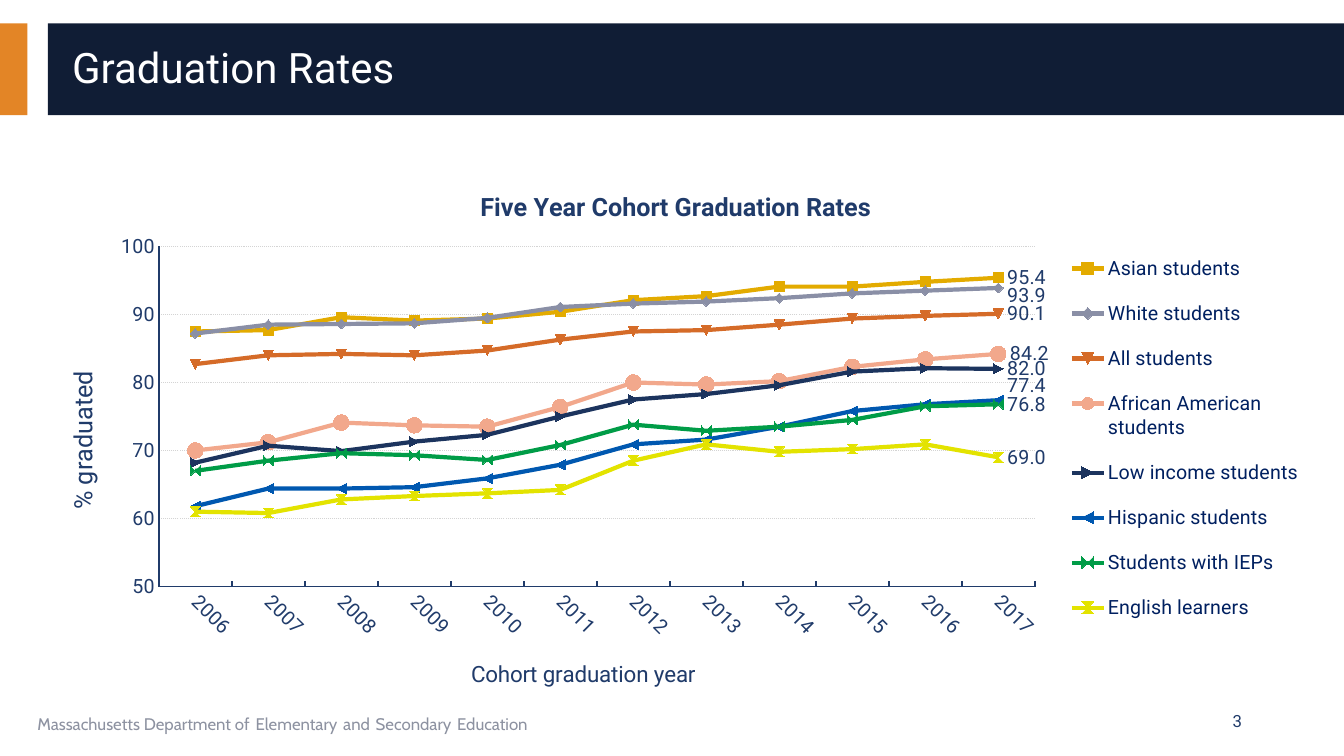
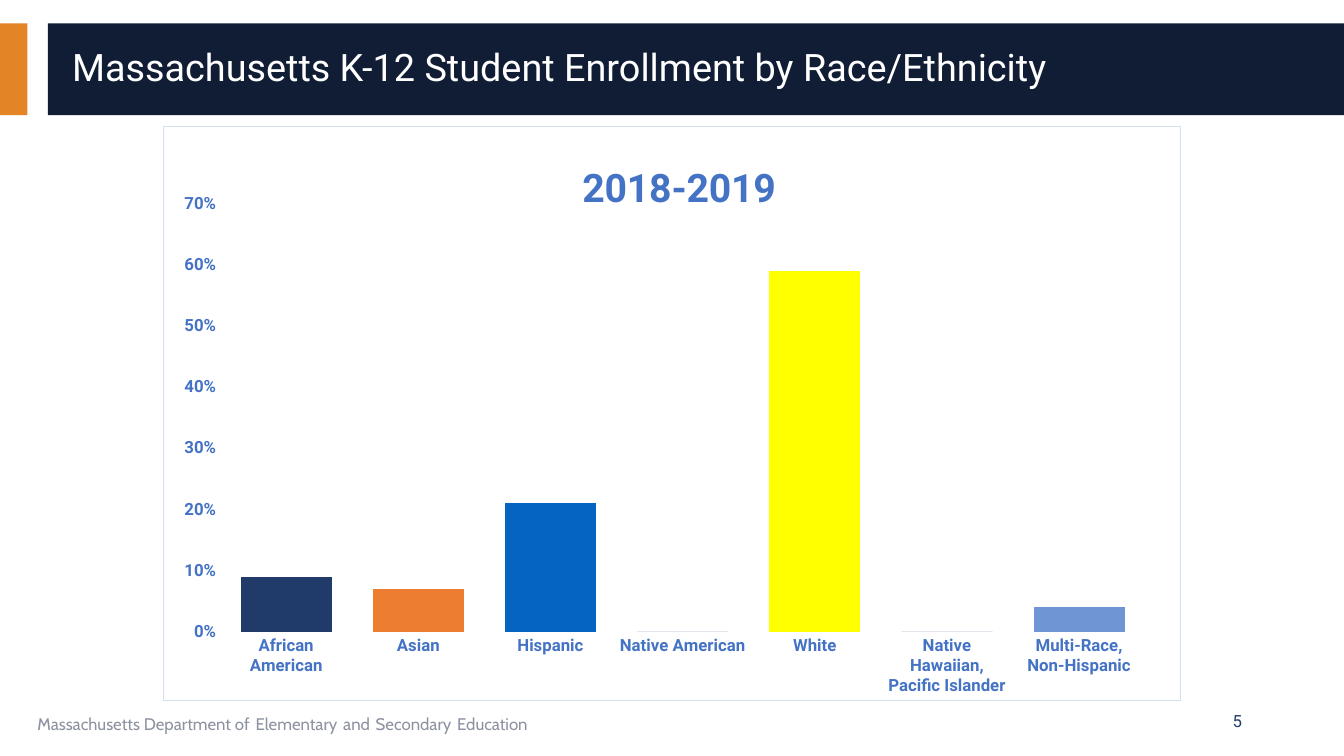
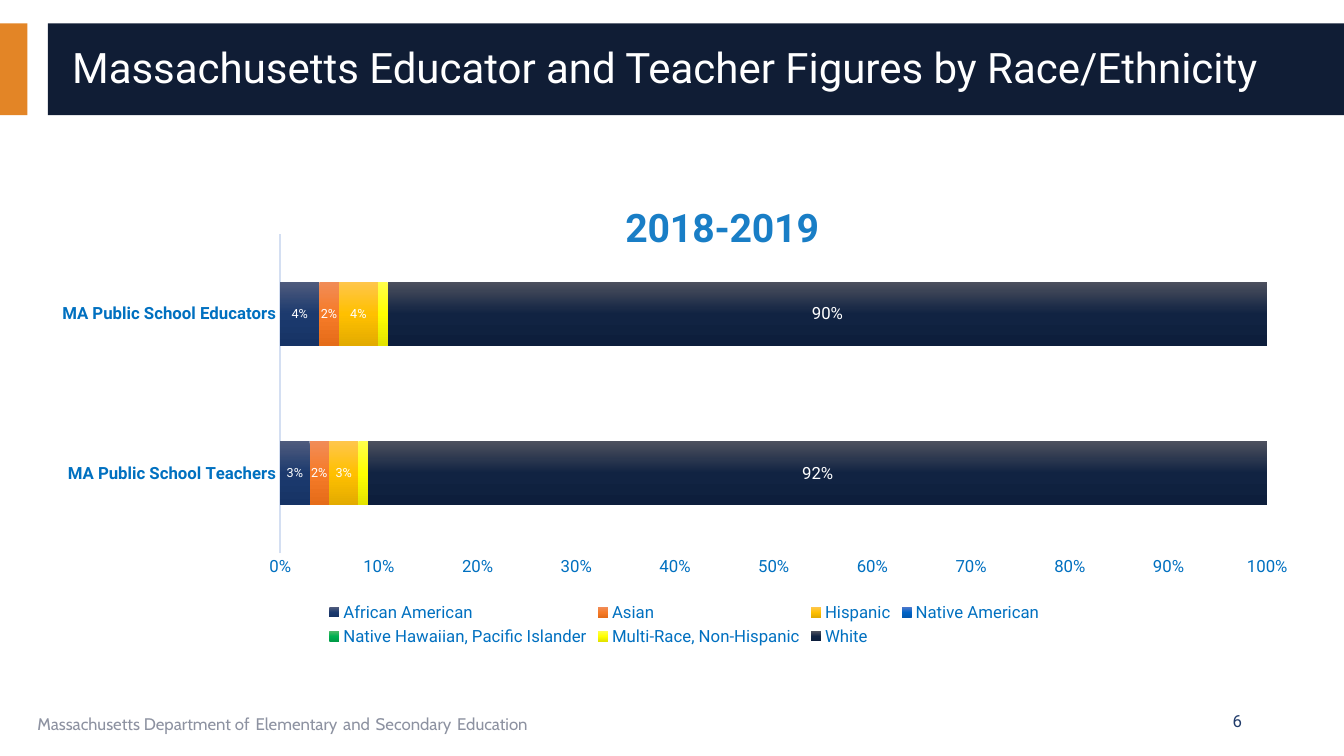
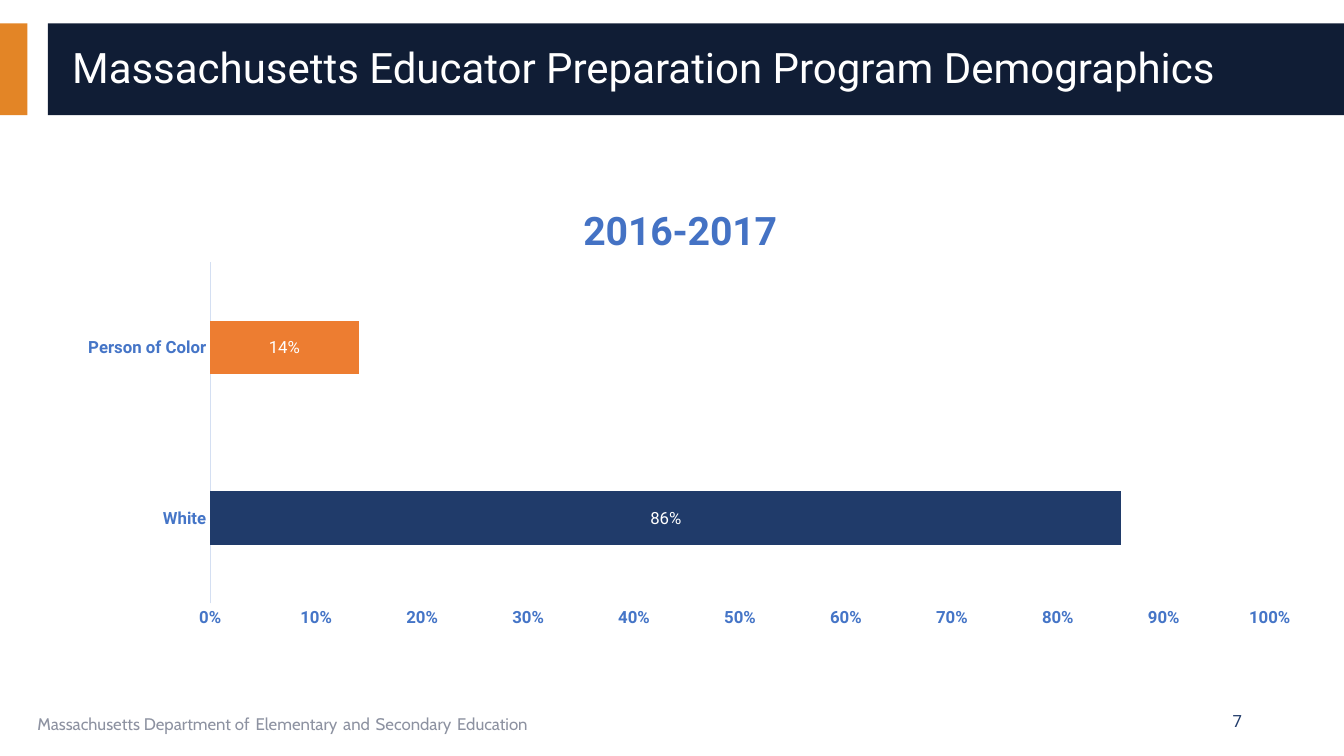
from dataclasses import dataclass

from lxml import etree
from pptx import Presentation
from pptx.chart.data import CategoryChartData
from pptx.dml.color import RGBColor
from pptx.enum.chart import (XL_CHART_TYPE, XL_LABEL_POSITION, XL_LEGEND_POSITION,
                             XL_MARKER_STYLE, XL_TICK_MARK)
from pptx.enum.dml import MSO_LINE
from pptx.enum.shapes import MSO_SHAPE
from pptx.enum.text import MSO_ANCHOR, PP_ALIGN
from pptx.oxml import parse_xml
from pptx.oxml.ns import nsdecls, qn
from pptx.util import Cm, Pt

LINE, COLUMN = XL_CHART_TYPE.LINE_MARKERS, XL_CHART_TYPE.COLUMN_CLUSTERED
STACKED, BAR = XL_CHART_TYPE.BAR_STACKED_100, XL_CHART_TYPE.BAR_CLUSTERED
CENTER, RIGHT = XL_LABEL_POSITION.CENTER, XL_LABEL_POSITION.RIGHT
LEGEND_RIGHT, LEGEND_BOTTOM = XL_LEGEND_POSITION.RIGHT, XL_LEGEND_POSITION.BOTTOM
CIRCLE = XL_MARKER_STYLE.CIRCLE
TICK_NONE, TICK_IN = XL_TICK_MARK.NONE, XL_TICK_MARK.INSIDE
DOTTED = MSO_LINE.ROUND_DOT
RECTANGLE = MSO_SHAPE.RECTANGLE
MIDDLE, TOP = MSO_ANCHOR.MIDDLE, MSO_ANCHOR.TOP
ALIGN_LEFT, ALIGN_RIGHT = PP_ALIGN.LEFT, PP_ALIGN.RIGHT

FONT, FOOTER_FONT = "Roboto", "Cabin"
NAVY, BAND, ACCENT = "203B6A", "101D35", "E38526"
WHITE, GREY, PALE = "FFFFFF", "8D92A1", "D4DFF2"
ORANGE, BLUE, YELLOW = "ED7D31", "0563C1", "FFFF00"
CHART_BLUE, AXIS_BLUE, LABEL_BLUE = "4472C4", "4575C7", "0070C0"
SLIDE_W, SLIDE_H = 33.87, 19.05
FOOTER = ("Massachusetts Department of", "Elementary", "and", "Secondary", "Education")

Box = tuple[float, float, float, float]


@dataclass
class Series:
    name: str
    values: list[float]
    color: str = NAVY
    gradient: tuple[str, ...] = ()
    label_size: int = 0
    label_shift: float = 0
    round_marker: bool = False


@dataclass
class ChartSpec:
    kind: int
    box: Box
    cats: list[str]
    series: list[Series]
    title: str
    title_at: tuple[float, float]
    plot: Box
    title_size: int = 28
    title_color: str = CHART_BLUE
    value_format: str = "0%"


def rgb(color: str) -> RGBColor:
    return RGBColor.from_string(color)


def style(font, size: float, color: str, bold: bool = False, name: str = FONT) -> None:
    font.size, font.bold, font.name = Pt(size), bold, name
    font.color.rgb = rgb(color)


def add_band(s, box: Box, color: str) -> None:
    sp = s.shapes.add_shape(RECTANGLE, *map(Cm, box))
    sp.shadow.inherit = False
    sp.fill.solid()
    sp.fill.fore_color.rgb = rgb(color)
    sp.line.fill.background()


def add_text(s, box: Box, anchor=MIDDLE, align=ALIGN_LEFT):
    tf = s.shapes.add_textbox(*map(Cm, box)).text_frame
    tf.word_wrap, tf.vertical_anchor = True, anchor
    p = tf.paragraphs[0]
    p.alignment = align
    return p


def add_page(prs, title: str, number: int, title_size: int = 30):
    s = prs.slides.add_slide(prs.slide_layouts[6])
    add_band(s, (0, 0.59, 0.69, 2.31), ACCENT)
    add_band(s, (1.21, 0.59, SLIDE_W - 1.21, 2.31), BAND)

    p = add_text(s, (0.69, 17.65, 21.44, 1.02), TOP)
    for i, words in enumerate(FOOTER):
        if i:
            r = p.add_run()
            r.text = " "
            style(r.font, 18, NAVY, name=FOOTER_FONT)
        r = p.add_run()
        r.text = words
        style(r.font, 12, GREY, name=FOOTER_FONT)

    p = add_text(s, (1.57, 0.81, 31.6, 1.88))
    p.text, p.line_spacing = title, 0.9
    style(p.font, title_size, WHITE)

    p = add_text(s, (23.93, 17.65, 7.62, 1.02), align=ALIGN_RIGHT)
    p.text = str(number)
    style(p.font, 12, NAVY)
    return s


def place(parent, index: int, values: tuple[float, ...], mode: str = "edge",
          inner: bool = False) -> None:
    for old in parent.findall(qn("c:layout")):
        parent.remove(old)
    layout = parse_xml(f"<c:layout {nsdecls('c')}><c:manualLayout/></c:layout>")
    manual = layout[0]
    settings = [("layoutTarget", "inner")] if inner else []
    if mode == "edge":
        settings += [("xMode", "edge"), ("yMode", "edge")]
    settings += zip("xywh", map(str, values))
    for tag, value in settings:
        etree.SubElement(manual, qn(f"c:{tag}")).set("val", value)
    parent.insert(index, layout)


def set_title(owner, text: str, at: tuple[float, float], size: int, color: str,
              bold: bool = False) -> None:
    tf = owner.text_frame
    tf.text = text
    style(tf.paragraphs[0].font, size, color, bold)
    place(owner._element, 1, at)


def add_chart(s, spec: ChartSpec):
    data = CategoryChartData(number_format=spec.value_format)
    data.categories = spec.cats
    for item in spec.series:
        data.add_series(item.name, item.values)
    chart = s.shapes.add_chart(spec.kind, *map(Cm, spec.box), data).chart
    style(chart.font, 10, NAVY)
    chart.has_legend = False
    chart.has_title = True
    set_title(chart.chart_title, spec.title, spec.title_at, spec.title_size,
              spec.title_color, True)
    chart.plots[0].vary_by_categories = False
    place(chart._chartSpace.chart.plotArea, 0, spec.plot, inner=True)
    return chart


def style_axis(axis, size: int, color: str, bold: bool = False, line: str = "",
               width: float = 1, tick=TICK_NONE) -> None:
    style(axis.tick_labels.font, size, color, bold)
    axis.major_tick_mark, axis.minor_tick_mark = tick, TICK_NONE
    axis.has_major_gridlines = False
    if line:
        axis.format.line.color.rgb = rgb(line)
        axis.format.line.width = Pt(width)
    else:
        axis.format.line.fill.background()


def scale_axis(axis, low: float | None, high: float | None, step: float, fmt: str) -> None:
    axis.minimum_scale, axis.maximum_scale, axis.major_unit = low, high, step
    axis.tick_labels.number_format = fmt
    axis.tick_labels.number_format_is_linked = False


def add_legend(chart, position, size: int, color: str) -> None:
    chart.has_legend = True
    chart.legend.position = position
    chart.legend.include_in_layout = False
    style(chart.legend.font, size, color)


def fill_series(series, item: Series) -> None:
    if item.gradient:
        stops = "".join(f'<a:gs pos="{i * 50000}"><a:srgbClr val="{c}"/></a:gs>'
                        for i, c in enumerate(item.gradient))
        series._element.get_or_add_spPr().insert(0, parse_xml(
            f"<a:gradFill {nsdecls('a')}><a:gsLst>{stops}</a:gsLst>"
            '<a:lin ang="5400000" scaled="0"/></a:gradFill>'))
    else:
        series.format.fill.solid()
        series.format.fill.fore_color.rgb = rgb(item.color)
    if item.label_size:
        labels = series.data_labels
        labels.show_value, labels.position = True, CENTER
        labels.number_format, labels.number_format_is_linked = "0%", False
        style(labels.font, item.label_size, WHITE)


def fill_points(series, colors: dict[int, str]) -> None:
    for i, color in colors.items():
        fill = series.points[i].format.fill
        fill.solid()
        fill.fore_color.rgb = rgb(color)


def draw_line(series, item: Series) -> None:
    series.smooth = False
    series.format.line.color.rgb = rgb(item.color)
    series.format.line.width = Pt(3)
    marker = series.marker
    if item.round_marker:
        marker.style = CIRCLE
    marker.size = 11 if item.round_marker else 7
    marker.format.fill.solid()
    marker.format.fill.fore_color.rgb = rgb(item.color)
    marker.format.line.color.rgb = rgb(item.color)
    label = series.points[len(item.values) - 1].data_label
    style(label.font, 14, NAVY)
    label.position = RIGHT
    if item.label_shift:
        place(label._get_or_add_dLbl(), 1, (0, item.label_shift), mode="offset")


def graduation_slide(prs) -> None:
    s = add_page(prs, "Graduation Rates", 3)
    spec = ChartSpec(
        LINE, (0.81, 4.09, 32.23, 13.69), [str(year) for year in range(2006, 2018)],
        [
            Series("Asian students", [87.5, 87.7, 89.6, 89.1, 89.4, 90.4, 92.1, 92.7,
                                      94.1, 94.1, 94.8, 95.4], "E3AB00"),
            Series("White students", [87.2, 88.5, 88.6, 88.7, 89.5, 91.1, 91.6, 91.9,
                                      92.4, 93.1, 93.5, 93.9], "8A8FA6", label_shift=0.015),
            Series("All students", [82.7, 84, 84.2, 84, 84.7, 86.3, 87.5, 87.7,
                                    88.5, 89.4, 89.8, 90.1], "D56B28"),
            Series("African American students",
                   [70, 71.2, 74.1, 73.7, 73.5, 76.4, 80, 79.7,
                    80.2, 82.3, 83.4, 84.2], "F2A88C", round_marker=True),
            Series("Low income students", [68.2, 70.7, 69.9, 71.3, 72.3, 75, 77.5, 78.3,
                                           79.6, 81.6, 82.1, 82], "1C345E"),
            Series("Hispanic students", [61.8, 64.4, 64.4, 64.6, 65.9, 67.9, 70.9, 71.6,
                                         73.5, 75.8, 76.8, 77.4], "0058B0",
                   label_shift=-0.026),
            Series("Students with IEPs", [67, 68.5, 69.6, 69.3, 68.6, 70.8, 73.8, 72.9,
                                          73.5, 74.5, 76.5, 76.8], "009C47"),
            Series("English learners", [61, 60.8, 62.8, 63.3, 63.7, 64.2, 68.5, 70.9,
                                        69.8, 70.2, 70.9, 69], "E3E300"),
        ],
        "Five Year Cohort Graduation Rates", (0.347, 0.044), (0.099, 0.155, 0.685, 0.626),
        title_size=18, title_color=NAVY, value_format="0.0")
    chart = add_chart(s, spec)
    years, rates = chart.category_axis, chart.value_axis
    style_axis(years, 14, NAVY, line=NAVY, width=1.25, tick=TICK_IN)
    style_axis(rates, 14, NAVY, line=NAVY, width=1.25)
    scale_axis(rates, 50, 100, 10, "#,##0")
    years._element.txPr.find(qn("a:bodyPr")).set("rot", "2700000")
    rates.has_major_gridlines = True
    grid = rates.major_gridlines.format.line
    grid.color.rgb, grid.width, grid.dash_style = rgb("D4D4D4"), Pt(0.75), DOTTED
    set_title(years.axis_title, "Cohort graduation year", (0.34, 0.908), 16, NAVY)
    set_title(rates.axis_title, "% graduated", (0.023, 0.376), 18, NAVY)
    body = next(rates.axis_title._element.iter(qn("a:bodyPr")))
    body.set("rot", "-5400000")
    body.set("vert", "horz")
    add_legend(chart, LEGEND_RIGHT, 14, "002060")
    place(chart.legend._element, 1, (0.808, 0.135, 0.187, 0.746))
    for series, item in zip(chart.series, spec.series):
        draw_line(series, item)


def enrollment_slide(prs) -> None:
    s = add_page(prs, "Massachusetts K-12 Student Enrollment by Race/Ethnicity", 5, 27)
    spec = ChartSpec(
        COLUMN, (4.11, 3.2, 25.65, 14.45),
        ["African American", "Asian", "Hispanic", "Native American", "White",
         "Native Hawaiian, Pacific Islander", "Multi-Race, Non-Hispanic"],
        [Series("Series 1", [0.09, 0.07, 0.21, 0, 0.59, 0, 0.04])],
        "2018-2019", (0.405, 0.049), (0.056, 0.134, 0.909, 0.746))
    chart = add_chart(s, spec)
    chart._chartSpace.chart.addnext(parse_xml(
        f"<c:spPr {nsdecls('c', 'a')}><a:solidFill><a:srgbClr val=\"{WHITE}\"/></a:solidFill>"
        f'<a:ln w="0"><a:solidFill><a:srgbClr val="{PALE}"/></a:solidFill></a:ln></c:spPr>'))
    for axis in (chart.category_axis, chart.value_axis):
        style_axis(axis, 12, CHART_BLUE, True)
    scale_axis(chart.value_axis, 0, 0.7, 0.1, "0%")
    chart.plots[0].gap_width, chart.plots[0].overlap = 45, -27
    fill_series(chart.series[0], spec.series[0])
    fill_points(chart.series[0], {1: ORANGE, 2: BLUE, 4: YELLOW, 6: "7095D4"})


def educator_slide(prs) -> None:
    s = add_page(prs, "Massachusetts Educator and Teacher Figures by Race/Ethnicity", 6)
    spec = ChartSpec(
        STACKED, (1.57, 3.89, 31.34, 12.5),
        ["MA Public School Teachers", "MA Public School Educators"],
        [
            Series("African American", [0.03, 0.04],
                   gradient=("4F5B7D", "1C3A6E", "163365"), label_size=9),
            Series("Asian", [0.02, 0.02],
                   gradient=("F18C57", "F67B28", "E56C19"), label_size=9),
            Series("Hispanic", [0.03, 0.04],
                   gradient=("FFC64B", "FFC000", "E3AB00"), label_size=9),
            Series("Native American", [0, 0], gradient=("4B77CC", "0063C6", "0058B0")),
            Series("Native Hawaiian, Pacific Islander", [0, 0],
                   gradient=("4BB968", "00B050", "009C47")),
            Series("Multi-Race, Non-Hispanic", [0.01, 0.01],
                   gradient=("FFFF4B", "FFFF00", "E3E300")),
            Series("White", [0.92, 0.9],
                   gradient=("4C505E", "112342", "0D1E3C"), label_size=12),
        ],
        "2018-2019", (0.447, 0.083), (0.175, 0.161, 0.794, 0.643), title_color="197EC6")
    chart = add_chart(s, spec)
    style_axis(chart.category_axis, 12, LABEL_BLUE, True, PALE)
    style_axis(chart.value_axis, 12, LABEL_BLUE)
    scale_axis(chart.value_axis, None, None, 0.1, "0%")
    chart.plots[0].gap_width, chart.plots[0].overlap = 150, 100
    add_legend(chart, LEGEND_BOTTOM, 12, LABEL_BLUE)
    for series, item in zip(chart.series, spec.series):
        fill_series(series, item)


def preparation_slide(prs) -> None:
    s = add_page(prs, "Massachusetts Educator Preparation Program Demographics", 7)
    spec = ChartSpec(
        BAR, (1.57, 4.27, 31.6, 11.84), ["White", "Person of Color"],
        [Series("Series 1", [0.86, 0.14], label_size=12)],
        "2016-2017", (0.41, 0.06), (0.118, 0.198, 0.845, 0.726))
    chart = add_chart(s, spec)
    style_axis(chart.category_axis, 12, AXIS_BLUE, True, PALE, 0.75)
    style_axis(chart.value_axis, 12, AXIS_BLUE, True)
    scale_axis(chart.value_axis, 0, 1, 0.1, "0%")
    chart.plots[0].gap_width = 219
    fill_series(chart.series[0], spec.series[0])
    fill_points(chart.series[0], {1: ORANGE})


def main() -> None:
    prs = Presentation()
    prs.slide_width, prs.slide_height = Cm(SLIDE_W), Cm(SLIDE_H)
    for build in (graduation_slide, enrollment_slide, educator_slide, preparation_slide):
        build(prs)
    prs.save("out.pptx")


if __name__ == "__main__":
    main()
